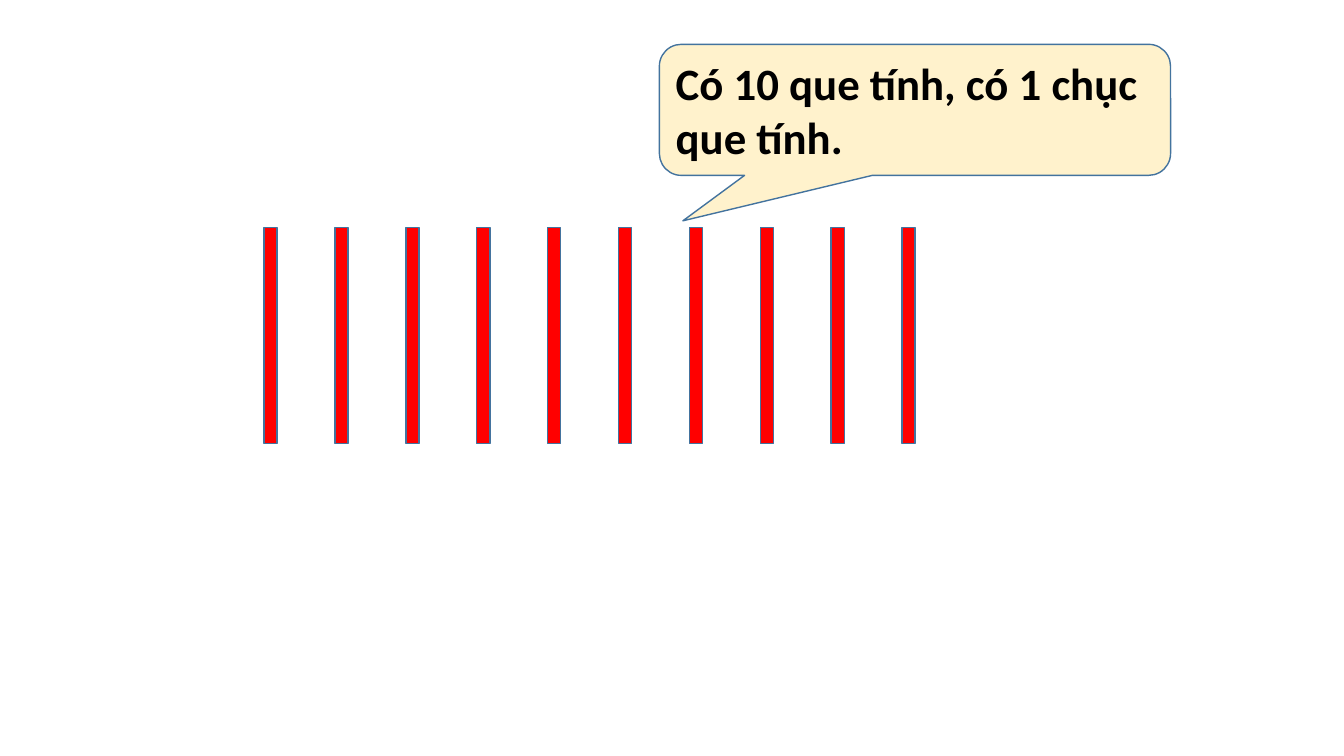
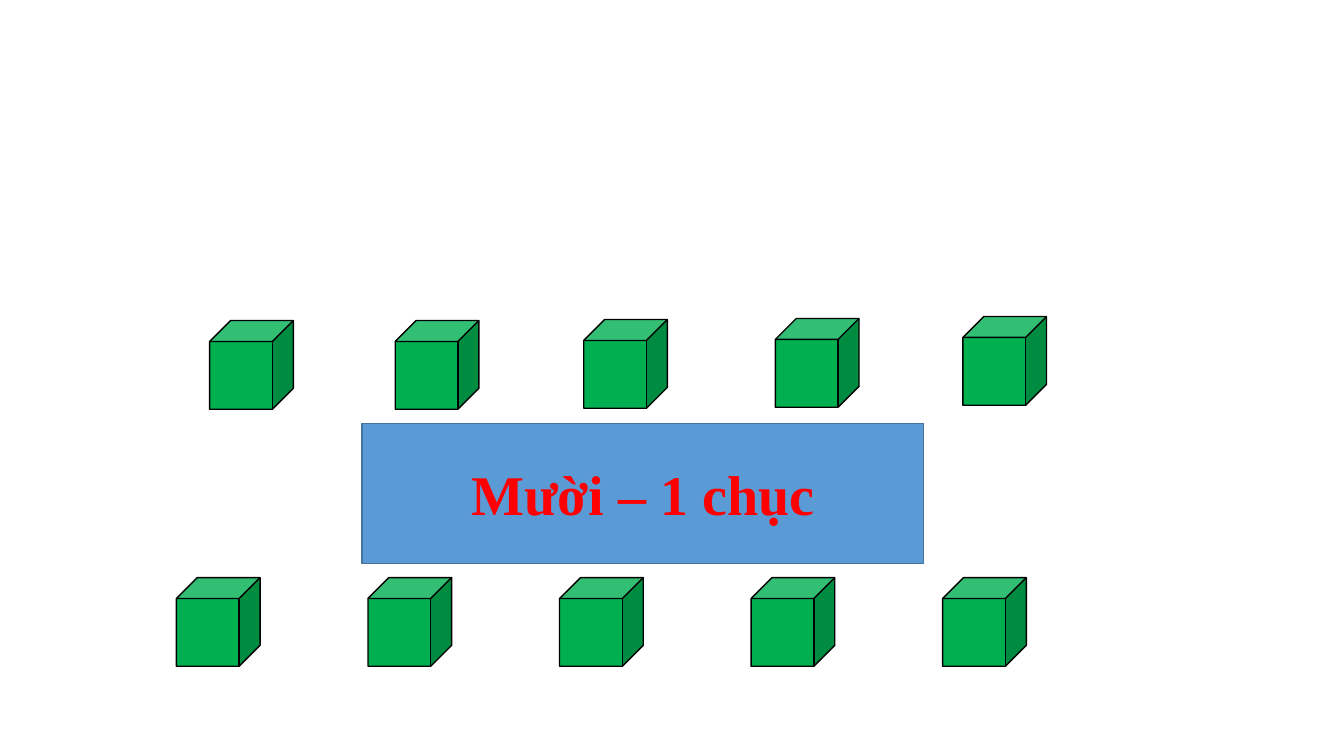
from pptx import Presentation
from pptx.dml.color import RGBColor
from pptx.enum.shapes import MSO_SHAPE
from pptx.enum.text import MSO_ANCHOR, PP_ALIGN
from pptx.util import Inches, Pt

CALLOUT = MSO_SHAPE.ROUNDED_RECTANGULAR_CALLOUT
RECTANGLE = MSO_SHAPE.RECTANGLE
CUBE = MSO_SHAPE.CUBE
MIDDLE = MSO_ANCHOR.MIDDLE
LEFT, CENTER = PP_ALIGN.LEFT, PP_ALIGN.CENTER

COLORS = {
    "background": "FFFFFF",
    "cream": "FFF2CC",
    "red": "FF0000",
    "green": "00B050",
    "blue": "5B9BD5",
    "outline": "43739E",
    "black": "000000",
}

STICK_COUNT = 10
STICK_LEFT, STICK_TOP, STICK_STEP = 2.62, 2.26, 0.703
STICK_SIZE = (0.13, 2.14)

CUBE_SIZE = (0.83, 0.88)
UPPER_CUBES = [(2.08, 3.18), (3.92, 3.18), (5.79, 3.17), (7.69, 3.16), (9.55, 3.14)]
LOWER_CUBES = [(1.75 + 1.9 * column, 5.73) for column in range(5)]


def color(name):
    return RGBColor.from_string(COLORS[name])


def add_page(deck):
    page = deck.slides.add_slide(deck.slide_layouts[6])
    page.background.fill.solid()
    page.background.fill.fore_color.rgb = color("background")
    return page


def add_figure(page, kind, position, size, fill, line="outline"):
    """Add a flat preset shape with a one-point outline."""
    figure = page.shapes.add_shape(kind, *map(Inches, (*position, *size)))
    figure.shadow.inherit = False
    figure.fill.solid()
    figure.fill.fore_color.rgb = color(fill)
    figure.line.color.rgb = color(line)
    figure.line.width = Pt(1)
    return figure


def write(figure, text, font_format, text_color, align):
    frame = figure.text_frame
    frame.word_wrap = True
    frame.vertical_anchor = MIDDLE
    para = frame.paragraphs[0]
    para.alignment = align
    span = para.add_run()
    span.text = text
    for name, value in font_format.items():
        setattr(span.font, name, value)
    span.font.color.rgb = color(text_color)


def build_sticks_page(deck):
    page = add_page(deck)
    callout = add_figure(page, CALLOUT, (6.54, 0.44), (5.07, 1.3), "cream")
    for index, value in enumerate((-0.454, 0.847, 0.167)):
        callout.adjustments[index] = value
    write(callout, "Có 10 que tính, có 1 chục que tính.",
          {"name": "Calibri", "size": Pt(32), "bold": True}, "black", LEFT)
    for index in range(STICK_COUNT):
        position = (STICK_LEFT + index * STICK_STEP, STICK_TOP)
        add_figure(page, RECTANGLE, position, STICK_SIZE, "red")


def build_cubes_page(deck):
    page = add_page(deck)
    for position in UPPER_CUBES + LOWER_CUBES:
        add_figure(page, CUBE, position, CUBE_SIZE, "green", "black")
    banner = add_figure(page, RECTANGLE, (3.59, 4.2), (5.57, 1.39), "blue")
    write(banner, "Mười – 1 chục",
          {"name": "Times New Roman", "size": Pt(40), "bold": True}, "red", CENTER)


def main():
    deck = Presentation()
    deck.slide_width, deck.slide_height = Inches(13.33), Inches(7.5)
    build_sticks_page(deck)
    build_cubes_page(deck)
    deck.save("out.pptx")


if __name__ == "__main__":
    main()
